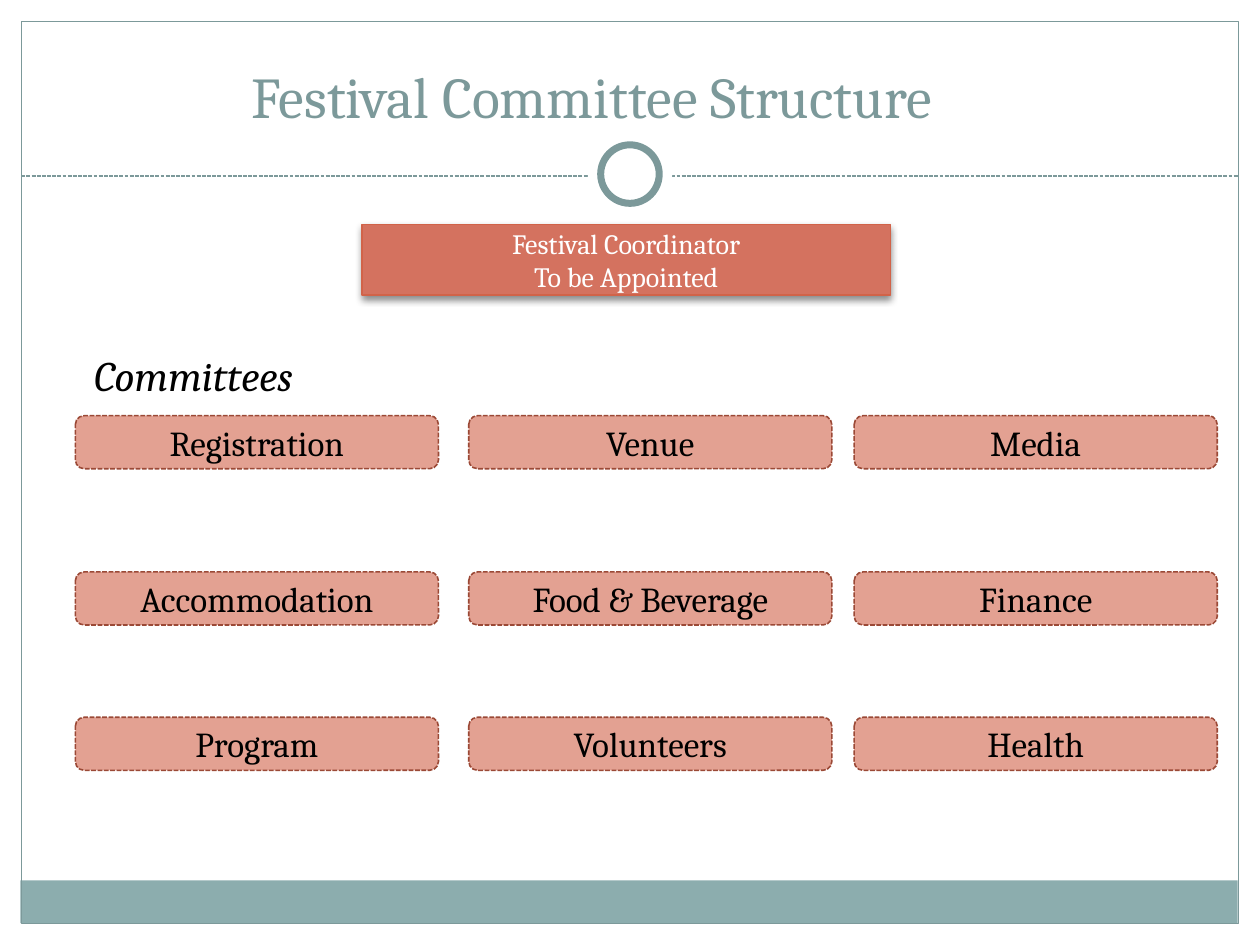
from lxml.etree import SubElement
from pptx import Presentation
from pptx.dml.color import RGBColor
from pptx.enum.dml import MSO_LINE
from pptx.enum.shapes import MSO_CONNECTOR, MSO_SHAPE
from pptx.enum.text import MSO_ANCHOR, PP_ALIGN
from pptx.oxml.ns import qn
from pptx.util import Cm, Pt

TEAL = "7C999A"


def color(hex_code):
    return RGBColor.from_string(hex_code)


def write(frame, text, size=20, ink="000000", font="Cambria", italic=False,
          align=PP_ALIGN.CENTER, anchor=MSO_ANCHOR.MIDDLE, wrap=True):
    """Fill a text frame, one paragraph per line of text."""
    frame.word_wrap = wrap
    frame.vertical_anchor = anchor
    for index, line in enumerate(text.split("\n")):
        paragraph = frame.paragraphs[0] if index == 0 else frame.add_paragraph()
        paragraph.alignment = align
        run = paragraph.add_run()
        run.text = line
        run.font.name = font
        run.font.size = Pt(size)
        run.font.italic = italic
        run.font.color.rgb = color(ink)


class FestivalSlide:
    def __init__(self, slide):
        self.shapes = slide.shapes

    def outline(self, line, ink, width, dashed):
        line.color.rgb = color(ink)
        line.width = Pt(width)
        if dashed:
            line.dash_style = MSO_LINE.SQUARE_DOT

    def shape(self, kind, left, top, width, height, fill=None, ink=None,
              line_width=0.75, dashed=False):
        shape = self.shapes.add_shape(kind, Cm(left), Cm(top), Cm(width), Cm(height))
        shape.shadow.inherit = False
        if fill:
            shape.fill.solid()
            shape.fill.fore_color.rgb = color(fill)
        else:
            shape.fill.background()
        if ink:
            self.outline(shape.line, ink, line_width, dashed)
        else:
            shape.line.fill.background()
        return shape

    def rule(self, left, right, y):
        rule = self.shapes.add_connector(
            MSO_CONNECTOR.STRAIGHT, Cm(left), Cm(y), Cm(right), Cm(y))
        self.outline(rule.line, TEAL, 0.75, dashed=True)
        SubElement(rule._element.spPr, qn("a:effectLst"))

    def label(self, text, left, top, width, height, **style):
        box = self.shapes.add_textbox(Cm(left), Cm(top), Cm(width), Cm(height))
        write(box.text_frame, text, **style)

    def committee(self, name, left, top):
        box = self.shape(MSO_SHAPE.ROUNDED_RECTANGLE, left, top, 7.32, 1.07,
                         "E3A192", "9B4936", 0.9, dashed=True)
        write(box.text_frame, name)

    def drop_shadow(self, shape):
        effects = shape._element.spPr.find(qn("a:effectLst"))
        shadow = SubElement(effects, qn("a:outerShdw"), blurRad=str(Pt(4)),
                            dist=str(Pt(2)), dir="5400000", rotWithShape="0")
        black = SubElement(shadow, qn("a:srgbClr"), val="000000")
        SubElement(black, qn("a:alpha"), val="45000")


def main():
    deck = Presentation()
    deck.slide_width, deck.slide_height = Cm(25.4), Cm(19.05)
    page = FestivalSlide(deck.slides.add_slide(deck.slide_layouts[6]))

    # Footer band, frame, and divider with ring
    page.shape(MSO_SHAPE.RECTANGLE, 0.41, 17.75, 24.54, 0.86, fill="8CADAE")
    page.shape(MSO_SHAPE.RECTANGLE, 0.43, 0.43, 24.54, 18.19, ink=TEAL)
    page.rule(0.43, 24.97, 3.55)
    page.shape(MSO_SHAPE.OVAL, 11.85, 2.67, 1.7, 1.7, fill="FFFFFF")
    page.shape(MSO_SHAPE.OVAL, 12.11, 2.92, 1.18, 1.18, "FFFFFF", TEAL, 4)

    # Title
    page.label("Festival Committee Structure", 0.08, 0.64, 23.7, 2.11,
               size=33, ink=TEAL, anchor=MSO_ANCHOR.BOTTOM)

    # Committee grid
    columns = (1.52, 9.45, 17.22)
    committees = {
        8.38: ("Registration", "Venue", "Media"),
        11.53: ("Accommodation", "Food & Beverage", "Finance"),
        14.46: ("Program", "Volunteers", "Health"),
    }
    for top, names in committees.items():
        for left, name in zip(columns, names):
            page.committee(name, left, top)

    # Coordinator
    coordinator = page.shape(MSO_SHAPE.RECTANGLE, 7.3, 4.52, 10.65, 1.43,
                             "D4725F", "D16349")
    page.drop_shadow(coordinator)
    write(coordinator.text_frame, "Festival Coordinator\nTo be Appointed",
          size=16, ink="FFFFFF")

    # Heading of the grid
    page.label("Committees", 1.65, 6.93, 5.05, 1.27, size=24, italic=True,
               align=PP_ALIGN.LEFT, anchor=MSO_ANCHOR.TOP, wrap=False)

    deck.save("out.pptx")


if __name__ == "__main__":
    main()
